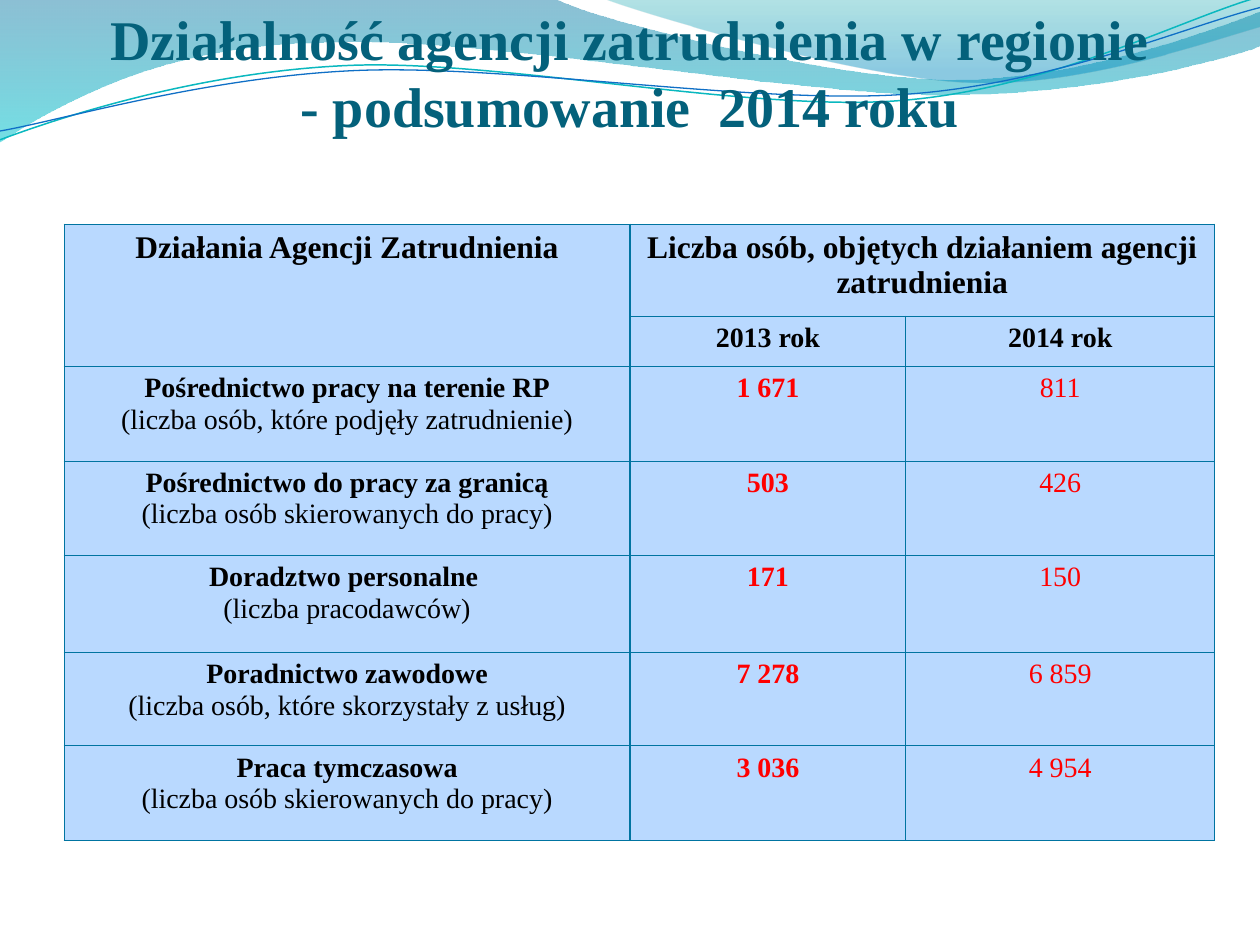
from lxml.etree import SubElement
from pptx import Presentation
from pptx.dml.color import RGBColor
from pptx.enum.text import MSO_ANCHOR, PP_ALIGN
from pptx.oxml.ns import qn
from pptx.util import Inches, Pt

FONT = "Times New Roman"
TITLE_TEAL = RGBColor(0x04, 0x61, 0x7B)
BORDER_BLUE = RGBColor(0x00, 0x74, 0xA1)
CELL_BLUE = RGBColor(0xB9, 0xD9, 0xFF)
BLACK = RGBColor(0, 0, 0)
RED = RGBColor(0xFF, 0, 0)
WAVE_TEAL = RGBColor(0x00, 0xC6, 0xCF)
CREST_TEAL = RGBColor(0x00, 0xA1, 0xA9)
CREST_BLUE = RGBColor(0x00, 0x8B, 0xBF)
LINE_TEAL = RGBColor(0x0A, 0xB8, 0xBF)
LINE_BLUE = RGBColor(0x0F, 0x6F, 0xC6)

presentation = Presentation()
presentation.slide_width = Inches(10)
presentation.slide_height = Inches(7.5)
slide = presentation.slides.add_slide(presentation.slide_layouts[6])


def add_curve(start, segments, close):
    """Draw segments of one point (straight) or three points (cubic Bezier), in inches."""
    builder = slide.shapes.build_freeform(Inches(start[0]), Inches(start[1]))
    builder.add_line_segments(
        [(Inches(x), Inches(y)) for segment in segments for x, y in segment], close=close)
    shape = builder.convert_to_shape()
    shape.shadow.inherit = False
    line_steps = iter(list(shape._element.spPr.iter(qn("a:lnTo"))))
    for segment in segments:
        steps = [next(line_steps) for _ in segment]
        if len(steps) == 3:
            steps[0].tag = qn("a:cubicBezTo")
            for step in steps[1:]:
                steps[0].append(step[0])
                step.getparent().remove(step)
    return shape


def add_run(paragraph, text, size, color, bold):
    run = paragraph.add_run()
    run.text = text
    run.font.name = FONT
    run.font.size = Pt(size)
    run.font.bold = bold
    run.font.color.rgb = color


# Header waves: start, segments, (position, colour, opacity in percent)
waves = [
    ((0, -0.01),
     [[(4.4, -0.01)],
      [(4.76, 0.17), (6.64, 0.63), (7.58, 0.63)],
      [(8.53, 0.63), (9.58, 0.26), (10, 0.09)],
      [(10.01, 0.36)],
      [(9.83, 0.44), (8.7, 0.76), (7.46, 0.75)],
      [(6.22, 0.75), (3.82, 0.28), (2.57, 0.34)],
      [(1.29, 0.35), (0.46, 0.83), (-0.01, 1.13)],
      [(0, -0.01)]],
     [(0, BORDER_BLUE, 45), (1, WAVE_TEAL, 55)]),
    ((4.79, -0.01),
     [[(5.09, 0.11), (6.82, 0.62), (7.69, 0.65)],
      [(8.56, 0.69), (9.61, 0.32), (10, 0.21)],
      [(10, 0)],
      [(4.79, -0.01)]],
     [(0, CREST_TEAL, 30), (0.8, CREST_BLUE, 45)]),
]
for start, segments, stops in waves:
    wave = add_curve(start, segments, close=True)
    wave.line.fill.background()
    wave.fill.gradient()
    wave.fill.gradient_angle = 270
    for gradient_stop, (position, color, _) in zip(wave.fill.gradient_stops, stops):
        gradient_stop.position = position
        gradient_stop.color.rgb = color
    color_elements = wave._element.spPr.find(qn("a:gradFill")).iter(qn("a:srgbClr"))
    for element, (_, _, opacity) in zip(list(color_elements), stops):
        SubElement(element, qn("a:alpha"), val=str(opacity * 1000))

# Thin lines over the waves
wave_lines = [
    ((0, 1.11),
     [[(0.48, 0.93), (1.58, 0.57), (2.77, 0.52)],
      [(3.95, 0.47), (5.93, 0.89), (7.13, 0.8)],
      [(8.33, 0.71), (9.38, 0.15), (9.98, -0.02)]], LINE_TEAL, 0.85),
    ((0, 1.04),
     [[(0.47, 0.96), (1.64, 0.61), (2.83, 0.56)],
      [(4.03, 0.51), (5.97, 0.83), (7.17, 0.75)],
      [(8.36, 0.67), (9.41, 0.21), (10, 0.06)]], LINE_BLUE, 0.75),
]
for start, segments, color, width in wave_lines:
    wave_line = add_curve(start, segments, close=False)
    wave_line.fill.background()
    wave_line.line.color.rgb = color
    wave_line.line.width = Pt(width)

# Title
title = slide.shapes.add_textbox(Inches(0.5), Inches(0.44), Inches(9), Inches(0.71))
title.text_frame.word_wrap = True
title.text_frame.vertical_anchor = MSO_ANCHOR.BOTTOM
title_paragraph = title.text_frame.paragraphs[0]
title_paragraph.alignment = PP_ALIGN.CENTER
add_run(title_paragraph, "Działalność agencji zatrudnienia w regionie", 32, TITLE_TEAL, True)
title_paragraph.add_line_break()
add_run(title_paragraph, "- podsumowanie  2014 roku", 32, TITLE_TEAL, True)

# Table
column_widths = [4.49, 2.19, 2.45]
row_heights = [0.73, 0.38, 0.75, 0.75, 0.77, 0.74, 0.75]
activities = [
    ("Pośrednictwo pracy na terenie RP", "(liczba osób, które podjęły zatrudnienie)", "1 671", "811"),
    ("Pośrednictwo do pracy za granicą", "(liczba osób skierowanych do pracy)", "503", "426"),
    ("Doradztwo personalne ", "(liczba pracodawców)", "171", "150"),
    ("Poradnictwo zawodowe", "(liczba osób, które skorzystały z usług)", "7 278", "6 859"),
    ("Praca tymczasowa", "(liczba osób skierowanych do pracy)", "3 036", "4 954"),
]
# Each cell holds lines of (text, size, colour, bold)
cell_lines = {
    (0, 0): [("Działania Agencji Zatrudnienia", 18, BLACK, True)],
    (0, 1): [("Liczba osób, objętych działaniem agencji zatrudnienia", 18, BLACK, True)],
    (1, 1): [("2013 rok", 16, BLACK, True)],
    (1, 2): [("2014 rok", 16, BLACK, True)],
}
for row, (name, measure, count_2013, count_2014) in enumerate(activities, start=2):
    cell_lines[row, 0] = [(name, 16, BLACK, True), (measure, 16, BLACK, False)]
    cell_lines[row, 1] = [(count_2013, 16, RED, True)]
    cell_lines[row, 2] = [(count_2014, 16, RED, False)]

table = slide.shapes.add_table(
    len(row_heights), len(column_widths), Inches(0.51), Inches(1.78),
    Inches(sum(column_widths)), Inches(sum(row_heights))).table
table.first_row = False
table.horz_banding = False
for column, width in zip(table.columns, column_widths):
    column.width = Inches(width)
for table_row, height in zip(table.rows, row_heights):
    table_row.height = Inches(height)
table.cell(0, 0).merge(table.cell(1, 0))
table.cell(0, 1).merge(table.cell(0, 2))
# The covered cell must not stretch the row of years
covered_cell = table.cell(1, 0)
covered_cell.margin_top = covered_cell.margin_bottom = Inches(0)

for cell in table.iter_cells():
    properties = cell._tc.get_or_add_tcPr()
    for side in ("a:lnL", "a:lnR", "a:lnT", "a:lnB"):
        border = SubElement(properties, qn(side), w=str(Pt(0.75)))
        border_fill = SubElement(border, qn("a:solidFill"))
        SubElement(border_fill, qn("a:srgbClr"), val=str(BORDER_BLUE))
    cell.fill.solid()
    cell.fill.fore_color.rgb = CELL_BLUE

for (row, column), lines in cell_lines.items():
    text_frame = table.cell(row, column).text_frame
    paragraph = text_frame.paragraphs[0]
    for index, line in enumerate(lines):
        if index and lines[index - 1][0].endswith(" "):
            paragraph.add_line_break()
        elif index:
            paragraph = text_frame.add_paragraph()
        paragraph.alignment = PP_ALIGN.CENTER
        add_run(paragraph, *line)

presentation.save("out.pptx")
